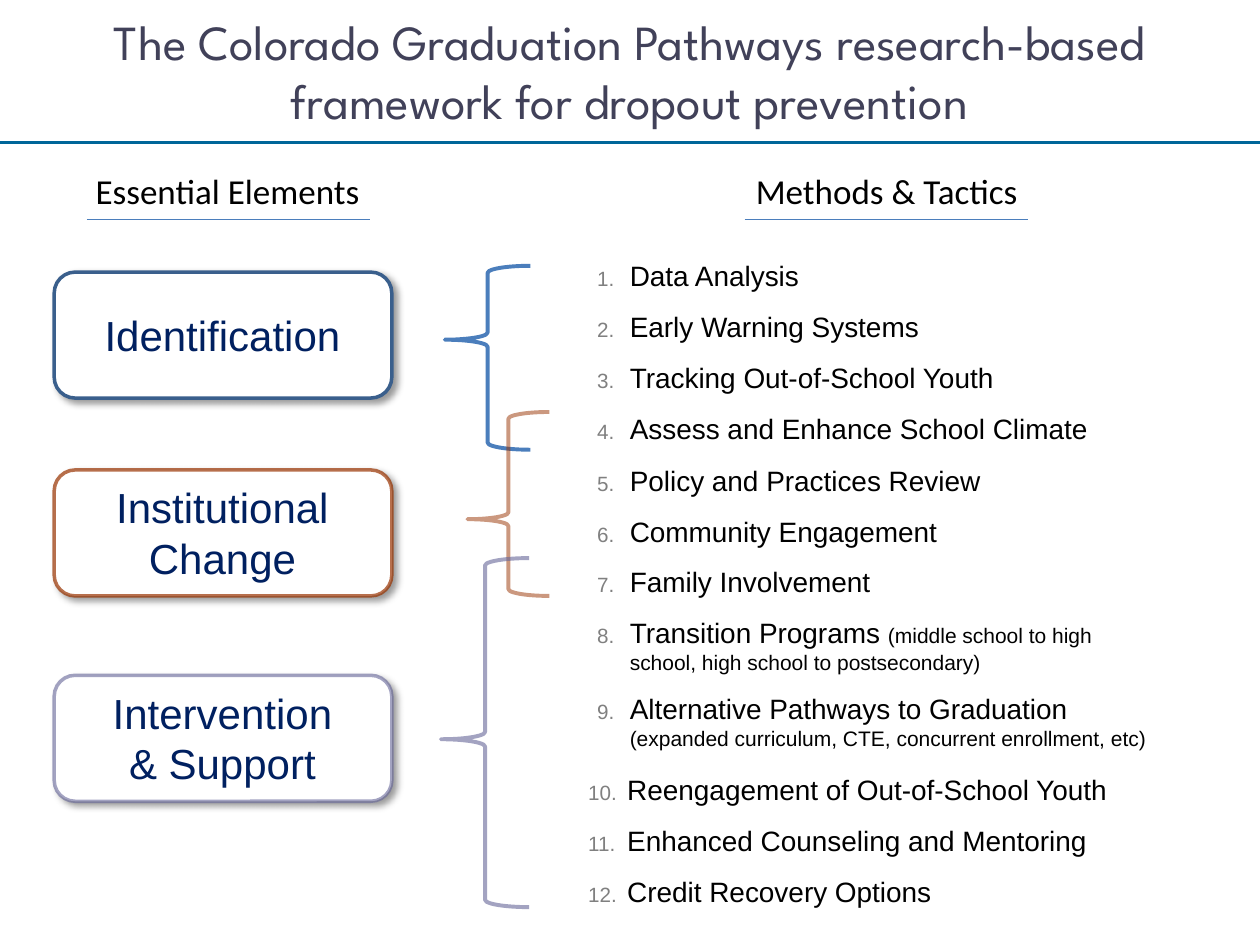
from lxml.etree import SubElement
from pptx import Presentation
from pptx.dml.color import RGBColor
from pptx.enum.shapes import MSO_CONNECTOR, MSO_SHAPE
from pptx.enum.text import MSO_ANCHOR, PP_ALIGN
from pptx.oxml.ns import qn
from pptx.util import Inches, Pt

BLACK = RGBColor(0x00, 0x00, 0x00)
WHITE = RGBColor(0xFF, 0xFF, 0xFF)
PLUM = RGBColor(0x41, 0x41, 0x59)
NAVY = RGBColor(0x00, 0x20, 0x60)
TEAL = RGBColor(0x00, 0x66, 0x99)
BLUE = RGBColor(0x4B, 0x7E, 0xBC)
DARK_BLUE = RGBColor(0x3A, 0x5F, 0x8C)
RUST = RGBColor(0x99, 0x33, 0x00)
VIOLET = RGBColor(0x66, 0x66, 0x99)


def add_xml(parent, tag, **attributes):
    return SubElement(parent, qn(tag), {key: str(value) for key, value in attributes.items()})


class FrameworkSlide:
    title_font = "League Spartan"
    heading_font = "Calibri"
    body_font = "Arial"
    note_size = 12

    def __init__(self, presentation):
        self.slide = presentation.slides.add_slide(presentation.slide_layouts[5])
        self.shapes = self.slide.shapes

    def format(self, paragraph, font, size, color, alignment=None):
        paragraph.font.name = font
        paragraph.font.size = Pt(size)
        paragraph.font.color.rgb = color
        paragraph.alignment = alignment

    def title(self, text, left, top, width, height):
        title = self.shapes.title
        title.left, title.top = Inches(left), Inches(top)
        title.width, title.height = Inches(width), Inches(height)
        title.text_frame.text = text
        title.text_frame.vertical_anchor = MSO_ANCHOR.TOP
        self.format(title.text_frame.paragraphs[0], self.title_font, 28, PLUM, PP_ALIGN.CENTER)

    def text_box(self, left, top, width, height, wrap=True):
        box = self.shapes.add_textbox(Inches(left), Inches(top), Inches(width), Inches(height))
        box.text_frame.word_wrap = wrap
        return box.text_frame

    def line(self, left, right, y, color, weight):
        connector = self.shapes.add_connector(
            MSO_CONNECTOR.STRAIGHT, Inches(left), Inches(y), Inches(right), Inches(y))
        connector.line.color.rgb = color
        connector.line.width = Pt(weight)
        add_xml(connector._element.spPr, "a:effectLst")

    def heading(self, text, left, width, line_left):
        frame = self.text_box(left, 1.3, width, 0.44, wrap=False)
        frame.text = text
        self.format(frame.paragraphs[0], self.heading_font, 20, BLACK)
        self.line(line_left, line_left + 2.25, 1.74, BLUE, 0.75)

    def outline(self, shape, color, weight, opacity):
        shape.shadow.inherit = False
        shape.line.color.rgb = color
        shape.line.width = Pt(weight)
        if opacity < 100:
            srgb = shape.line._ln.find(".//" + qn("a:srgbClr"))
            add_xml(srgb, "a:alpha", val=opacity * 1000)

    def element(self, text, top, text_height, color, opacity):
        height = 1
        shape = self.shapes.add_shape(
            MSO_SHAPE.ROUNDED_RECTANGLE, Inches(0.43), Inches(top), Inches(2.68), Inches(height))
        shape.fill.solid()
        shape.fill.fore_color.rgb = WHITE
        self.outline(shape, color, 2, opacity)
        effects = shape._element.spPr.find(qn("a:effectLst"))
        shadow = add_xml(effects, "a:outerShdw", blurRad=Pt(4), dist=Pt(3),
                         dir=45 * 60000, algn="tl", rotWithShape=0)
        add_xml(add_xml(shadow, "a:srgbClr", val=BLACK), "a:alpha", val=40000)

        frame = self.text_box(0.67, top + (height - text_height) / 2, 2.19, text_height)
        frame.text = text
        self.format(frame.paragraphs[0], self.body_font, 24, NAVY, PP_ALIGN.CENTER)

    def brace(self, left, top, width, height, point, color, opacity):
        shape = self.shapes.add_shape(
            MSO_SHAPE.LEFT_BRACE, Inches(left), Inches(top), Inches(width), Inches(height))
        shape.adjustments[0] = 0.083
        shape.adjustments[1] = point
        shape.fill.background()
        self.outline(shape, color, 2.25, opacity)

    def numbered_list(self, items, start, left, top, width, height, indent):
        frame = self.text_box(left, top, width, height)
        for index, (text, note) in enumerate(items):
            paragraph = frame.paragraphs[0] if index == 0 else frame.add_paragraph()
            paragraph.space_after = Pt(10)
            self.format(paragraph, self.body_font, 16, BLACK)
            paragraph.add_run().text = text
            if note:
                run = paragraph.add_run()
                run.text = note
                run.font.size = Pt(self.note_size)
            self.number(paragraph, start, indent)

    def number(self, paragraph, start, indent):
        properties = paragraph._p.get_or_add_pPr()
        properties.set("marL", str(Inches(indent)))
        properties.set("indent", str(-Inches(indent)))
        # Bullet settings go before the default run properties
        defaults = properties.find(qn("a:defRPr"))
        add_xml(add_xml(properties, "a:buClr"), "a:srgbClr", val="808080")
        add_xml(properties, "a:buSzPct", val=74000)
        add_xml(properties, "a:buFont", typeface=self.body_font)
        add_xml(properties, "a:buAutoNum", type="arabicPeriod", startAt=start)
        properties.append(defaults)


def main():
    presentation = Presentation()
    presentation.slide_width, presentation.slide_height = Inches(10), Inches(7.5)
    page = FrameworkSlide(presentation)

    # Title and column headings
    page.title("The Colorado Graduation Pathways research-based framework for dropout prevention",
               0.07, 0.04, 9.85, 1.04)
    page.line(0, 10, 1.13, TEAL, 1.5)
    page.heading("Essential Elements", 0.66, 2.32, 0.69)
    page.heading("Methods & Tactics", 5.9, 2.3, 5.91)

    # Essential elements
    page.element("Identification", 2.16, 0.5, DARK_BLUE, 100)
    page.element("Institutional Change", 3.73, 0.91, RUST, 69)
    page.element("Intervention & Support", 5.36, 0.91, VIOLET, 60)

    # Braces from each element to its methods
    page.brace(3.53, 2.11, 0.68, 1.46, 0.402, BLUE, 100)
    page.brace(3.71, 3.27, 0.65, 1.46, 0.583, RUST, 50)
    page.brace(3.5, 4.43, 0.7, 2.77, 0.519, VIOLET, 60)

    # Methods and tactics
    page.numbered_list([("Data Analysis", ""),
                        ("Early Warning Systems", ""),
                        ("Tracking Out-of-School Youth", "")],
                       1, 4.64, 2, 4.59, 1.19, 0.26)
    page.numbered_list([("Assess and Enhance School Climate", ""),
                        ("Policy and Practices Review", ""),
                        ("Community Engagement", "")],
                       4, 4.64, 3.22, 4.59, 1.19, 0.26)
    page.numbered_list([("Family Involvement", ""),
                        ("Transition Programs ",
                         "(middle school to high school, high school to postsecondary)"),
                        ("Alternative Pathways to Graduation ",
                         "(expanded curriculum, CTE, concurrent enrollment, etc)")],
                       7, 4.64, 4.43, 4.69, 1.59, 0.26)
    page.numbered_list([("Reengagement of Out-of-School Youth", ""),
                        ("Enhanced Counseling and Mentoring", ""),
                        ("Credit Recovery Options", "")],
                       10, 4.57, 6.08, 5.37, 1.19, 0.31)

    presentation.save("out.pptx")


if __name__ == "__main__":
    main()
